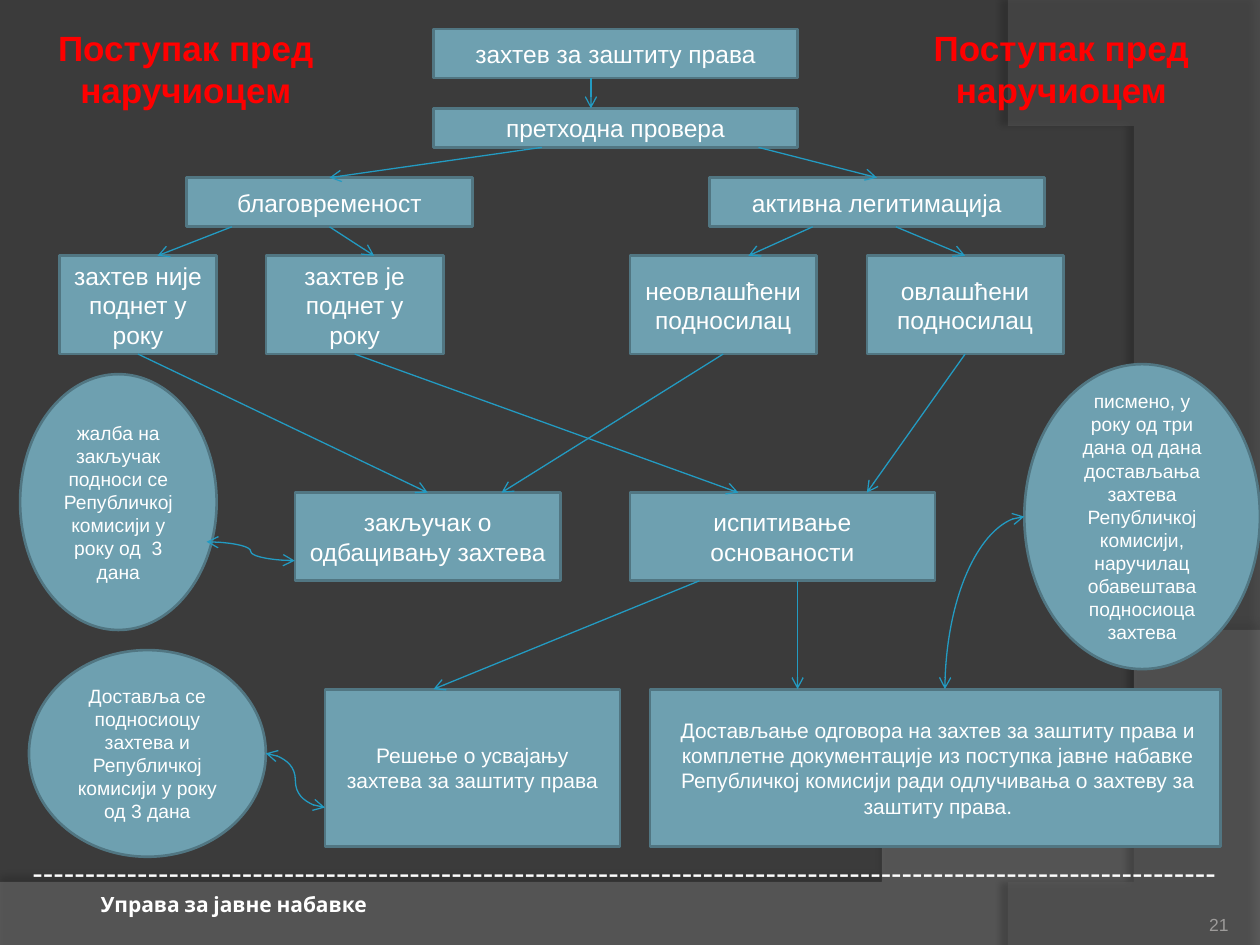
from dataclasses import dataclass

from lxml import etree
from pptx import Presentation
from pptx.dml.color import RGBColor
from pptx.enum import shapes, text
from pptx.oxml import ns
from pptx.util import Inches, Pt

COLORS = {
    "background": "3B3B3B", "wave": "7F7F7F", "arc": "5E5E5E", "box": "6EA0B0",
    "border": "517682", "arrow": "239BC2", "heading": "FF0000",
    "white": "FFFFFF", "number": "9D9B9A", "shadow": "000000",
}
RECT, OVAL = shapes.MSO_SHAPE.RECTANGLE, shapes.MSO_SHAPE.OVAL
TOP, BOTTOM = 0, 2
CENTER, LEFT, RIGHT = text.PP_ALIGN.CENTER, text.PP_ALIGN.LEFT, text.PP_ALIGN.RIGHT
Point = tuple[float, float]
Joint = tuple[str, int]


@dataclass
class Step:
    key: str
    at: tuple[float, float, float, float]
    words: str
    size: int = 14
    kind: int = RECT
    hanging: bool = False


@dataclass
class Arrow:
    """Each end is a point, or a step's key with a side of that step."""
    start: Point | Joint
    end: Point | Joint
    curve: str = ""


@dataclass
class Curtain:
    """Outline: straight points, then a Bezier curve back to the first point."""
    corners: list[Point]
    controls: list[Point]
    color: str
    opacity: int
    shadow_opacity: int
    distance: float
    direction: int


STEPS = [
    Step("request", (3.44, 0.23, 2.89, 0.39), "захтев за заштиту права"),
    Step("check", (3.44, 0.86, 2.89, 0.31), "претходна провера"),
    Step("timely", (1.48, 1.41, 2.27, 0.39), "благовременост"),
    Step("standing", (5.63, 1.41, 2.66, 0.39), "активна легитимација"),
    Step("late", (0.47, 2.03, 1.25, 0.78), "захтев није поднет у року"),
    Step("in_time", (2.11, 2.03, 1.41, 0.78), "захтев је поднет у року"),
    Step("unauthorised", (5, 2.03, 1.48, 0.78), "неовлашћени подносилац"),
    Step("authorised", (6.88, 2.03, 1.56, 0.78), "овлашћени подносилац"),
    Step("rejection", (2.34, 3.91, 2.11, 0.7), "закључак о одбацивању захтева"),
    Step("merits", (5, 3.91, 2.42, 0.7), "испитивање основаности"),
    Step("approval", (2.58, 5.47, 2.34, 1.25),
         "Решење о усвајању захтева за заштиту права", 12),
    Step("reply", (5.16, 5.47, 4.53, 1.25),
         "Достављање одговора на захтев за заштиту права и\n"
         "комплетне документације из поступка јавне набавке\n"
         "Републичкој комисији ради одлучивања о захтеву за\n"
         "заштиту права.", 12, hanging=True),
    Step("appeal", (0.16, 2.97, 1.56, 2.03),
         "жалба на закључак подноси се Републичкој комисији у року од  3 дана", 11, OVAL),
    Step("notice", (8.13, 2.89, 1.87, 2.42),
         "писмено, у року од три дана од дана достављања захтева Републичкој комисији, "
         "наручилац обавештава подносиоца захтева", 11, OVAL),
    Step("delivery", (0.23, 5.16, 1.88, 1.64),
         "Доставља се подносиоцу захтева и Републичкој комисији у року од 3 дана", 11, OVAL),
]
ARROWS = [
    Arrow((4.69, 0.62), (4.69, 0.86)),
    Arrow((4.3, 1.17), ("timely", TOP)),
    Arrow((6.02, 1.17), ("standing", TOP)),
    Arrow((1.84, 1.8), (1.25, 2.03)),
    Arrow(("timely", BOTTOM), (2.97, 2.03)),
    Arrow((6.45, 1.8), (5.94, 2.03)),
    Arrow((7.11, 1.8), ("authorised", TOP)),
    Arrow(("late", BOTTOM), ("rejection", TOP)),
    Arrow(("in_time", BOTTOM), (5.86, 3.91)),
    Arrow(("unauthorised", BOTTOM), (3.98, 3.91)),
    Arrow(("authorised", BOTTOM), (6.88, 3.91)),
    Arrow((5.55, 4.61), (3.44, 5.47)),
    Arrow((6.33, 4.61), (6.33, 5.47)),
    Arrow((2.34, 4.45), (1.64, 4.3), "curvedConnector3"),
    Arrow((2.58, 6.41), (2.11, 5.98), "curvedConnector3"),
    Arrow((8.13, 4.1), (7.5, 5.47), "curvedConnector2"),
]
CURTAINS = [
    Curtain([(0, 7.05), (0, 7.5), (10, 7.5), (10, 5.2)],
            [(5.59, 7.29), (3.91, 7.19)], "wave", 45, 35, 3.5, 270),
    Curtain([(8, 0), (10, 0.02), (10, 7.5), (8.21, 7.5)],
            [(9.35, 6.19), (10.18, 3)], "arc", 40, 45, 4, 180),
]


def rgb(name: str) -> RGBColor:
    return RGBColor.from_string(COLORS[name])


def add_xml(parent, tag: str, **attributes):
    child = etree.SubElement(parent, ns.qn(tag))
    for name, value in attributes.items():
        child.set(name, str(value))
    return child


def write(shape, words: str, align=CENTER, hanging=False, **font) -> None:
    frame = shape.text_frame
    frame.word_wrap = True
    frame.text = words
    color = font.pop("color", "white")
    for paragraph in frame.paragraphs:
        paragraph.alignment = align
        if hanging:
            properties = paragraph._p.get_or_add_pPr()
            properties.set("marL", str(Inches(0.6)))
            properties.set("indent", str(Inches(-0.56)))
        for name, value in ({"name": "Arial"} | font).items():
            setattr(paragraph.font, name, value)
        paragraph.font.color.rgb = rgb(color)


def draw_curtain(slide, curtain: Curtain) -> None:
    points = [*curtain.corners[1:]]
    a, (b, c), d = curtain.corners[-1], curtain.controls, curtain.corners[0]
    for i in range(1, 40):
        t = i / 40
        points.append(tuple((1 - t) ** 3 * p + 3 * t * (1 - t) ** 2 * q
                            + 3 * t * t * (1 - t) * r + t ** 3 * s
                            for p, q, r, s in zip(a, b, c, d)))
    builder = slide.shapes.build_freeform(*d, scale=Inches(1))
    builder.add_line_segments(points)
    shape = builder.convert_to_shape()
    shape.line.fill.background()
    shape.fill.solid()
    shape.fill.fore_color.rgb = rgb(curtain.color)
    fill = shape._element.spPr.find(ns.qn("a:solidFill"))
    add_xml(fill[0], "a:alpha", val=curtain.opacity * 1000)
    shape.shadow.inherit = False
    effects = shape._element.spPr.find(ns.qn("a:effectLst"))
    shadow = add_xml(effects, "a:outerShdw", blurRad=Pt(4), dist=Pt(curtain.distance),
                     dir=curtain.direction * 60000, rotWithShape=0)
    shade = add_xml(shadow, "a:srgbClr", val=COLORS["shadow"])
    add_xml(shade, "a:alpha", val=curtain.shadow_opacity * 1000)


def draw_step(slide, step: Step):
    shape = slide.shapes.add_shape(step.kind, *map(Inches, step.at))
    shape.shadow.inherit = False
    shape.fill.solid()
    shape.fill.fore_color.rgb = rgb("box")
    shape.line.color.rgb = rgb("border")
    shape.line.width = Pt(1.5)
    shape.text_frame.vertical_anchor = text.MSO_ANCHOR.MIDDLE
    write(shape, step.words, hanging=step.hanging, size=Pt(step.size))
    return shape


def draw_arrow(slide, arrow: Arrow, boxes: dict) -> None:
    """Curved arrows point both ways, straight ones only at their end."""
    kind = shapes.MSO_CONNECTOR.CURVE if arrow.curve else shapes.MSO_CONNECTOR.STRAIGHT
    ends = (arrow.start, arrow.end)
    points = [(0, 0) if isinstance(end[0], str) else end for end in ends]
    link = slide.shapes.add_connector(kind, *(Inches(v) for point in points for v in point))
    for end, connect in zip(ends, (link.begin_connect, link.end_connect)):
        if isinstance(end[0], str):
            connect(boxes[end[0]], end[1])
    link.line.color.rgb = rgb("arrow")
    link.line.width = Pt(0.75)
    properties = link._element.spPr
    line = properties.find(ns.qn("a:ln"))
    if arrow.curve:
        properties.find(ns.qn("a:prstGeom")).set("prst", arrow.curve)
        add_xml(line, "a:headEnd", type="arrow")
    add_xml(line, "a:tailEnd", type="arrow")
    add_xml(properties, "a:effectLst")


def main() -> None:
    deck = Presentation()
    deck.slide_width, deck.slide_height = Inches(10), Inches(7.5)
    slide = deck.slides.add_slide(deck.slide_layouts[5])
    slide.background.fill.solid()
    slide.background.fill.fore_color.rgb = rgb("background")
    for curtain in CURTAINS:
        draw_curtain(slide, curtain)

    def add_text(*at: float):
        return slide.shapes.add_textbox(*map(Inches, at))

    title = slide.shapes.title
    title.left, title.top, title.width, title.height = map(Inches, (0.16, 0.16, 2.63, 0.77))
    for heading in (title, add_text(7.11, 0.16, 2.63, 0.77)):
        write(heading, "Поступак пред наручиоцем", size=Pt(20), bold=True, color="heading")
        heading.text_frame.vertical_anchor = text.MSO_ANCHOR.BOTTOM
        heading.text_frame.auto_size = text.MSO_AUTO_SIZE.NONE

    divider = add_text(0.16, 6.72, 9.63, 0.4)
    write(divider, "-" * 113, LEFT, size=Pt(18))
    divider.text_frame.word_wrap = False
    write(add_text(0.7, 7.03, 3.13, 0.3), "Управа за јавне набавке", LEFT,
          name="Cabin", size=Pt(12), bold=True)
    number = add_text(8.92, 7.02, 0.83, 0.4)
    write(number, "21", RIGHT, size=Pt(10), color="number")
    number.text_frame.vertical_anchor = text.MSO_ANCHOR.BOTTOM
    for side in ("left", "top", "right", "bottom"):
        setattr(number.text_frame, f"margin_{side}", 0)

    boxes = {step.key: draw_step(slide, step) for step in STEPS}
    for arrow in ARROWS:
        draw_arrow(slide, arrow, boxes)
    deck.save("out.pptx")


if __name__ == "__main__":
    main()
